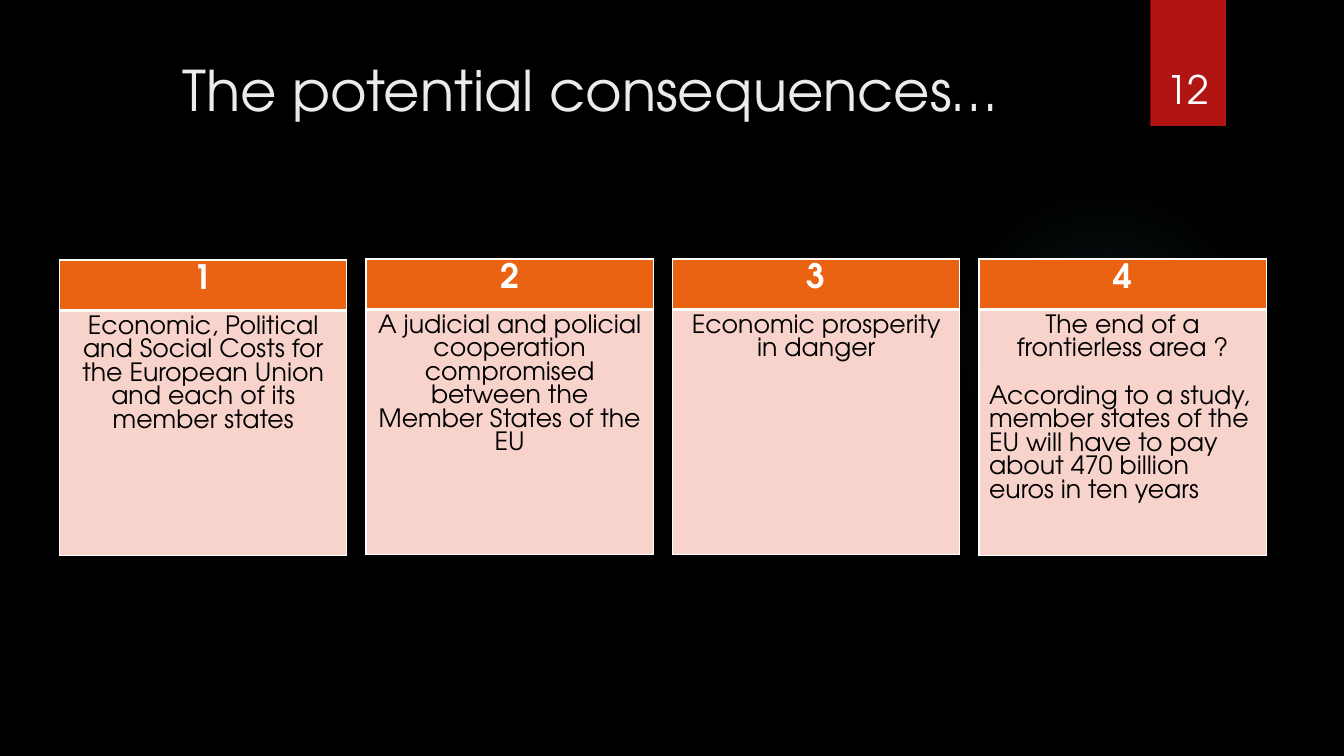
import pptx
import pptx.dml.color
import pptx.enum.shapes
import pptx.enum.text
import pptx.oxml
import pptx.oxml.ns
import pptx.util
from pptx.util import Inches

ALIGN = pptx.enum.text.PP_ALIGN
ANCHOR = pptx.enum.text.MSO_ANCHOR
SHAPE = pptx.enum.shapes.MSO_SHAPE
NAMESPACE = pptx.oxml.ns.nsdecls("a")


def color(value):
    return pptx.dml.color.RGBColor.from_string(value)


def write(para, text, size=18, ink="000000", bold=False, align=ALIGN.CENTER,
          before=0, font="TeX Gyre Adventor"):
    para.alignment = align
    if before:
        para.space_before = pptx.util.Pt(before)
    span = para.add_run()
    span.text = text
    span.font.name = font
    span.font.size = pptx.util.Pt(size)
    span.font.bold = bold
    span.font.color.rgb = color(ink)


class SlideBuilder:
    white, light, black = "FFFFFF", "EBEBEB", "000000"
    red, orange, pink, glow = "B01513", "EA6312", "F7D3CC", "50B9C1"

    def __init__(self, deck):
        self.page = deck.slides.add_slide(deck.slide_layouts[5])
        background = self.page.background.fill
        background.solid()
        background.fore_color.rgb = color(self.black)

    def shape(self, kind, left, top, width, height, fill):
        shape = self.page.shapes.add_shape(
            kind, Inches(left), Inches(top), Inches(width), Inches(height))
        shape.shadow.inherit = False
        shape.line.fill.background()
        shape.fill.solid()
        shape.fill.fore_color.rgb = color(fill)
        return shape

    def halo(self, left, top, size):
        shape = self.shape(SHAPE.OVAL, left, top, size, size, self.glow)
        stops = "".join(
            f'<a:gs pos="{place * 1000}"><a:srgbClr val="{self.glow}">'
            f'<a:alpha val="{alpha * 1000}"/></a:srgbClr></a:gs>'
            for place, alpha in ((0, 7), (36, 6), (69, 0), (100, 0)))
        gradient = pptx.oxml.parse_xml(
            f'<a:gradFill {NAMESPACE}><a:gsLst>{stops}</a:gsLst><a:path path="circle">'
            '<a:fillToRect l="50000" t="50000" r="50000" b="50000"/></a:path></a:gradFill>')
        properties = shape.fill._xPr
        properties.replace(properties.find(pptx.oxml.ns.qn("a:solidFill")), gradient)

    def title(self, text, left, top, width, height):
        title = self.page.shapes.title
        title.left, title.top = Inches(left), Inches(top)
        title.width, title.height = Inches(width), Inches(height)
        title.text_frame.vertical_anchor = ANCHOR.TOP
        write(title.text_frame.paragraphs[0], text, size=40, ink=self.light)

    def number(self, text, left, top, width, height):
        box = self.page.shapes.add_textbox(
            Inches(left), Inches(top), Inches(width), Inches(height))
        box.text_frame.word_wrap = True
        box.text_frame.vertical_anchor = ANCHOR.BOTTOM
        write(box.text_frame.paragraphs[0], text, size=28, ink=self.white)

    def cell(self, cell, fill, bottom):
        cell.fill.solid()
        cell.fill.fore_color.rgb = color(fill)
        cell.vertical_anchor = ANCHOR.TOP
        cell.margin_top = cell.margin_bottom = Inches(0.05)
        properties = cell._tc.get_or_add_tcPr()
        for index, (side, points) in enumerate(
                (("L", 1), ("R", 1), ("T", 1), ("B", bottom))):
            properties.insert(index, pptx.oxml.parse_xml(
                f'<a:ln{side} {NAMESPACE} w="{points * 12700}"><a:solidFill>'
                f'<a:srgbClr val="{self.white}"/></a:solidFill></a:ln{side}>'))

    def card(self, heading, texts, left, top, width, heights):
        frame = self.page.shapes.add_table(
            2, 1, Inches(left), Inches(top), Inches(width), Inches(sum(heights)))
        table = frame.table
        for row, height in zip(table.rows, heights):
            row.height = Inches(height)
        head, body = table.cell(0, 0), table.cell(1, 0)
        self.cell(head, self.orange, bottom=3)
        self.cell(body, self.pink, bottom=1)
        write(head.text_frame.paragraphs[0], heading, size=24, ink=self.white, bold=True)
        write(body.text_frame.paragraphs[0], texts[0])
        for text in texts[1:]:
            write(body.text_frame.add_paragraph(), text, align=ALIGN.LEFT, before=17)


def main():
    deck = pptx.Presentation()
    deck.slide_width, deck.slide_height = Inches(13.33), Inches(7.5)
    builder = SlideBuilder(deck)

    # Backdrop and page marker
    builder.halo(9.41, 1.83, 3.08)
    builder.shape(SHAPE.RECTANGLE, 11.41, 0, 0.75, 1.25, builder.red)

    # Title and page number
    builder.title("The potential consequences…", 0.71, 0.5, 10.29, 1.4)
    builder.number("12", 11.32, 0.32, 0.92, 0.84)

    # Four numbered consequences
    consequences = (
        ["Economic, Political and Social Costs for the European Union "
         "and each of its member states"],
        ["A judicial and policial cooperation compromised between "
         "the Member States of the EU"],
        ["Economic prosperity in danger"],
        ["The end of a frontierless area ?",
         "According to a study, member states of the EU will have to pay "
         "about 470 billion euros in ten years"],
    )
    for index, texts in enumerate(consequences):
        top = 2.57 if index else 2.58
        builder.card(str(index + 1), texts, 0.59 + index * 3.04, top, 2.85, (0.41, 2.43))

    deck.save("out.pptx")


if __name__ == "__main__":
    main()
